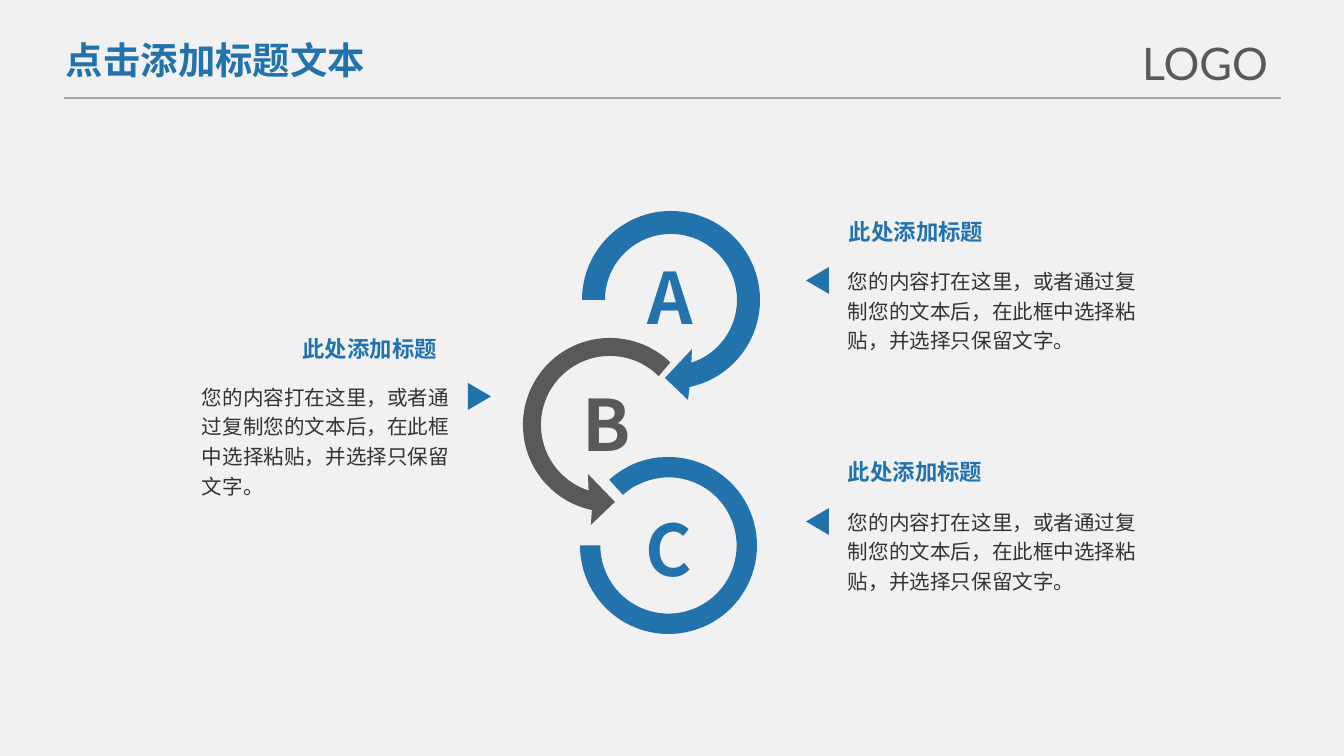
from itertools import pairwise
from math import cos, radians, sin, tan
from pptx import Presentation
from pptx.dml.color import RGBColor
from pptx.enum.shapes import MSO_CONNECTOR, MSO_SHAPE
from pptx.enum.text import MSO_AUTO_SIZE, PP_ALIGN
from pptx.oxml.ns import qn
from pptx.util import Pt
from lxml.etree import SubElement

PX = 914400 / 134.4
BLUE = RGBColor(0x22, 0x72, 0xAB)
GRAY = RGBColor(0x59, 0x59, 0x59)
DARK = RGBColor(0x33, 0x33, 0x33)
RULE = RGBColor(0xA6, 0xA6, 0xA6)
PAPER = RGBColor(0xF1, 0xF1, 0xF1)
CJK = "Noto Sans CJK SC"
HEAD = "此处添加标题"
BODY = "您的内容打在这里，或者通过复制您的文本后，在此框中选择粘贴，并选择只保留文字。"


def write(text, box, size, color, font=CJK, bold=False, wrap=False,
          align=PP_ALIGN.LEFT, space=1.0, inset=(10, 5)):
    frame = slide.shapes.add_textbox(*[int(v * PX) for v in box]).text_frame
    frame.word_wrap = wrap
    frame.auto_size = MSO_AUTO_SIZE.SHAPE_TO_FIT_TEXT
    frame.margin_left = frame.margin_right = int(inset[0] * PX)
    frame.margin_top = frame.margin_bottom = int(inset[1] * PX)
    para = frame.paragraphs[0]
    para.alignment = align
    para.line_spacing = space
    run = para.add_run()
    run.text = text
    run.font.name = font
    run.font.size = Pt(size)
    run.font.bold = bold
    run.font.color.rgb = color
    SubElement(run.font._element, qn("a:ea")).set("typeface", font)


def arc(x, y, r, start, end):
    low, high = sorted((start, end))
    inner = [a for a in range(-360, 361, 90) if low < a < high]
    stops = [start, *(inner if start < end else inner[::-1]), end]
    steps = [[(x + r * cos(radians(start)), y + r * sin(radians(start)))]]
    for a, b in pairwise(map(radians, stops)):
        k = 4 / 3 * tan((b - a) / 4)
        steps.append([
            (x + r * (cos(a) - k * sin(a)), y + r * (sin(a) + k * cos(a))),
            (x + r * (cos(b) + k * sin(b)), y + r * (sin(b) - k * cos(b))),
            (x + r * cos(b), y + r * sin(b))])
    return steps


deck = Presentation()
deck.slide_width = int(1344 * PX)
deck.slide_height = int(756 * PX)
slide = deck.slides.add_slide(deck.slide_layouts[6])
slide.background.fill.solid()
slide.background.fill.fore_color.rgb = PAPER

rule = slide.shapes.add_connector(
    MSO_CONNECTOR.STRAIGHT, *[int(v * PX) for v in (64, 98, 1281, 98)])
rule.line.color.rgb = RULE
rule.line.width = Pt(1)
SubElement(rule._element.spPr, qn("a:effectLst"))

for left, top, align in [
        (839, 213, PP_ALIGN.LEFT), (838, 453, PP_ALIGN.LEFT), (291, 330, PP_ALIGN.RIGHT)]:
    write(HEAD, (left, top, 156, 38), 12, BLUE, bold=True, align=align)

for left, top, width, height in [
        (838, 259, 310, 99), (838, 500, 310, 99), (192, 375, 269, 129)]:
    write(BODY, (left, top, width, height), 11, DARK, wrap=True, space=1.2)

shapes = []
for left, top, turn in [(804, 269, 270), (804, 510, 270), (466, 385, 90)]:
    mark = slide.shapes.add_shape(
        MSO_SHAPE.ISOSCELES_TRIANGLE, *[int(v * PX) for v in (left, top, 27, 23)])
    mark.rotation = turn
    shapes.append((mark, BLUE))

for start, end in [(228, 264), (243, 180)]:
    ring = slide.shapes.add_shape(
        MSO_SHAPE.BLOCK_ARC, *[int(v * PX) for v in (580, 457, 177, 177)])
    ring.adjustments[0] = start * 0.6
    ring.adjustments[1] = end * 0.6
    ring.adjustments[2] = 0.115
    shapes.append((ring, BLUE))

outlines = [
    (arc(610, 425, 87, -46, -258) + [[(591, 525)], [(615, 502)], [(588, 474)]]
     + arc(610, 425, 69, -252, -45), GRAY),
    (arc(671, 300, 89, -76, 78) + [[(688, 400)], [(665, 378)], [(692, 349)]]
     + arc(671, 300, 66, 72, -76), BLUE),
    (arc(671, 300, 89, -180, -75) + arc(671, 300, 66, -75, -180), BLUE),
]
for steps, color in outlines:
    points = [(x * PX, y * PX) for step in steps for x, y in step]
    pen = slide.shapes.build_freeform(*points[0])
    pen.add_line_segments(points[1:], close=True)
    shape = pen.convert_to_shape()
    shapes.append((shape, color))
    nodes = iter(list(shape._element.iter(qn("a:lnTo"))))
    for step in steps[1:]:
        group = [next(nodes) for _ in step]
        if len(group) == 3:
            curve = group[0].makeelement(qn("a:cubicBezTo"))
            group[0].addprevious(curve)
            for node in group:
                curve.append(node[0])
                node.getparent().remove(node)

for shape, color in shapes:
    shape.shadow.inherit = False
    shape.fill.solid()
    shape.fill.fore_color.rgb = color
    shape.line.fill.background()

for text, left, top, width, color in [
        ("A", 637, 249, 74, BLUE), ("B", 573, 376, 70, GRAY), ("C", 636, 501, 69, BLUE)]:
    write(text, (left, top, width, 97), 38, color, bold=True)

write("点击添加标题文本", (53, 30, 329, 59), 20, BLUE, bold=True, inset=(13, 7))
write("LOGO", (1129, 29, 168, 67), 24, GRAY, font="Lato", inset=(13, 7))

deck.save("out.pptx")
